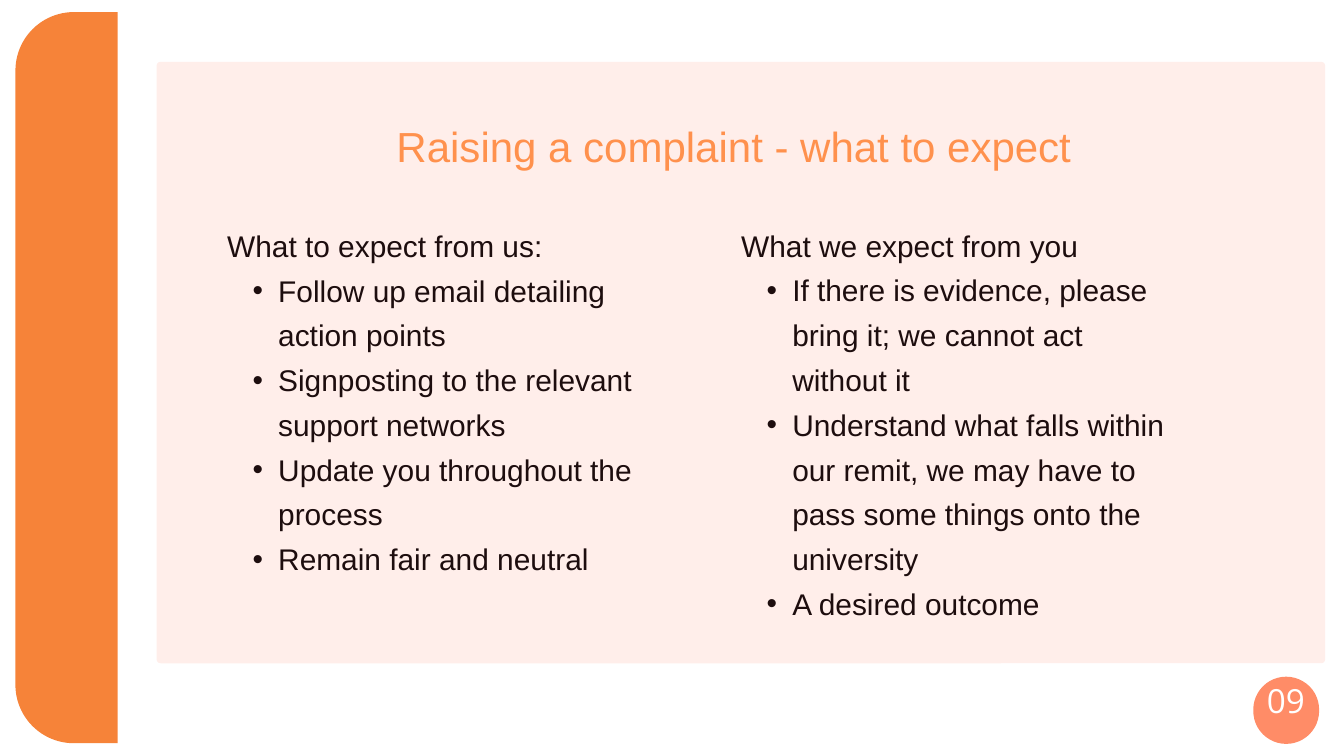
from pptx import Presentation
from pptx.dml.color import RGBColor
from pptx.enum.shapes import MSO_SHAPE
from pptx.enum.text import MSO_ANCHOR, PP_ALIGN
from pptx.oxml.ns import qn
from pptx.util import Pt
from lxml.etree import SubElement

# Content
TITLE = "Raising a complaint - what to expect"
PAGE = "09"
COLUMNS = [
    ("What to expect from us:", [
        "Follow up email detailing action points",
        "Signposting to the relevant support networks",
        "Update you throughout the process",
        "Remain fair and neutral",
    ]),
    ("What we expect from you", [
        "If there is evidence, please bring it; we cannot act without it",
        "Understand what falls within our remit, we may have to pass some "
        "things onto the university",
        "A desired outcome",
    ]),
]
COLORS = {"orange": "F68339", "white": "FFFFFF", "blush": "FFEEEA",
          "coral": "FF8C67", "title": "FF914D", "ink": "1D0D0E"}

# Rounded panels, back to front: left, top, width, height, radius, colour
PANELS = [
    (23, 18, 254, 1088, 87, "orange"),
    (175, 0, 1856, 1125, 12, "white"),
    (233, 92, 1739, 895, 6, "blush"),
    (1865, 1007, 98, 100, 49, "coral"),
]
COLUMN_LEFT, COLUMN_TOP, COLUMN_WIDTH, COLUMN_STEP = 338, 325, 662, 765
COLUMN_HEIGHTS = [528, 594]
BULLET_INDENT, BULLET_HANG = 76, 38
SCALE = 9144  # EMU per px, 100 px to the inch


def px(*values):
    return [v * SCALE for v in values]


def rgb(name):
    return RGBColor.from_string(COLORS[name])


def add_panel(shapes, left, top, width, height, radius, color):
    sp = shapes.add_shape(MSO_SHAPE.ROUNDED_RECTANGLE,
                          *px(left, top, width, height))
    sp.adjustments[0] = radius / min(width, height)
    sp.shadow.inherit = False
    sp.fill.solid()
    sp.fill.fore_color.rgb = rgb(color)
    sp.line.fill.background()


def place(sp, left, top, width, height):
    sp.left, sp.top, sp.width, sp.height = px(left, top, width, height)
    tf = sp.text_frame
    tf.word_wrap = True
    tf.vertical_anchor = MSO_ANCHOR.TOP
    tf.margin_left = tf.margin_top = tf.margin_right = tf.margin_bottom = 0
    return tf


def write(p, text, size, color, spacing, font="Arial", align=PP_ALIGN.LEFT):
    p.text = text
    p.alignment = align
    p.line_spacing = Pt(spacing)
    f = p.runs[0].font
    f.name, f.size, f.color.rgb = font, Pt(size), rgb(color)


def add_bullet(p):
    pPr = p._p.get_or_add_pPr()
    indent, hang = px(BULLET_INDENT, BULLET_HANG)
    pPr.set("marL", str(indent))
    pPr.set("indent", str(-hang))
    SubElement(pPr, qn("a:buFont")).set("typeface", "Arial")
    SubElement(pPr, qn("a:buChar")).set("char", "•")


prs = Presentation()
prs.slide_width, prs.slide_height = px(2000, 1125)
s = prs.slides.add_slide(prs.slide_layouts[5])
shapes = s.shapes

# Panels and page badge
for panel in PANELS:
    add_panel(shapes, *panel)
tf = place(shapes.add_textbox(0, 0, 0, 0), 1855, 1047, 117, 39)
write(tf.paragraphs[0], PAGE, 35.6, "white", 17.8, "Open Sans", PP_ALIGN.CENTER)

# Title, brought in front of the panels
title = shapes.title
shapes._spTree.append(title._element)
tf = place(title, 329, 179, 1526, 83)
write(tf.paragraphs[0], TITLE, 45, "title", 54, align=PP_ALIGN.CENTER)

# Two columns: heading and bullets
for i, ((heading, bullets), height) in enumerate(zip(COLUMNS, COLUMN_HEIGHTS)):
    tf = place(shapes.add_textbox(0, 0, 0, 0), COLUMN_LEFT + i * COLUMN_STEP,
               COLUMN_TOP, COLUMN_WIDTH, height)
    write(tf.paragraphs[0], heading, 32, "ink", 48)
    for bullet in bullets:
        p = tf.add_paragraph()
        write(p, bullet, 32, "ink", 48)
        p.level = 1
        add_bullet(p)

prs.save("out.pptx")
